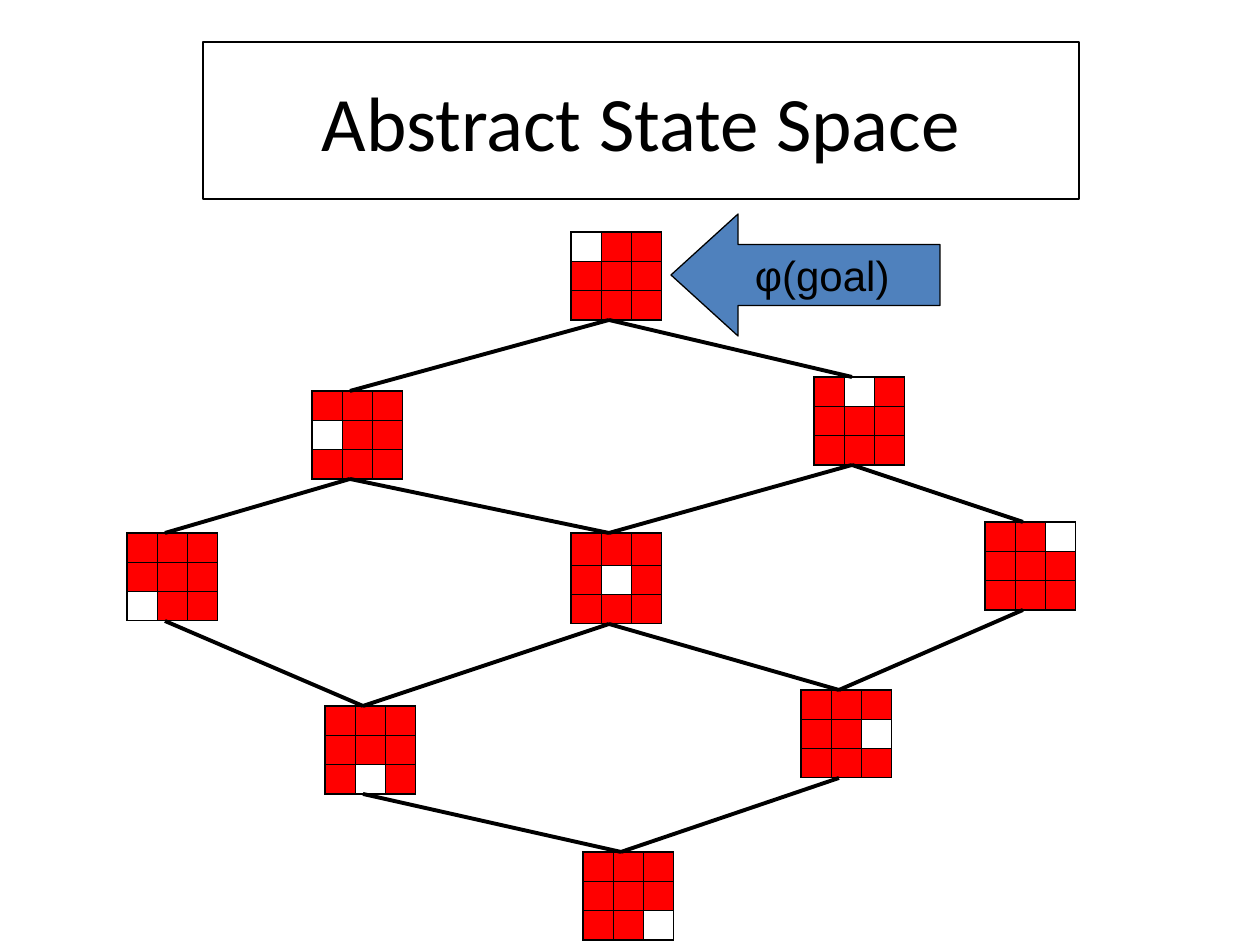
import pptx
import pptx.util
import pptx.dml.color
import pptx.enum.shapes
import pptx.enum.text
import pptx.oxml.ns
from lxml import etree

SCALE = 914400 // 126  # EMU per px
BLACK, WHITE, RED, BLUE = "000000", "FFFFFF", "FF0000", "4F81BD"
SIDE = 88   # board height
MID = 38    # where lines meet a board, from its left edge

# Each board, keyed by the row and column of its blank: left, top, extra height
BOARDS = {
    (0, 0): (571, 232, 0),
    (0, 1): (814, 377, 0),
    (0, 2): (985, 522, 0),
    (1, 0): (312, 391, 0),
    (1, 1): (571, 533, 3),
    (1, 2): (801, 690, 0),
    (2, 0): (127, 533, 0),
    (2, 1): (325, 706, 0),
    (2, 2): (583, 852, 0),
}


def px(*sizes):
    return [pptx.util.Emu(size * SCALE) for size in sizes]


def color(code):
    return pptx.dml.color.RGBColor.from_string(code)


def put(item, values):
    for name, value in values.items():
        setattr(item, name, value)


def child(node, tag, **attrs):
    return etree.SubElement(node, pptx.oxml.ns.qn(tag), attrs)


class Deck:
    thin, thick = 0.75, 2.25

    def __init__(self, slide):
        self.slide = slide

    def fill(self, item, code):
        item.fill.solid()
        item.fill.fore_color.rgb = color(code)

    def line(self, item, width):
        item.line.color.rgb = color(BLACK)
        item.line.width = pptx.util.Pt(width)

    def text(self, shape, words, font, size, wrap):
        frame = shape.text_frame
        put(frame, {"word_wrap": wrap,
                    "vertical_anchor": pptx.enum.text.MSO_ANCHOR.MIDDLE})
        para = frame.paragraphs[0]
        para.alignment = pptx.enum.text.PP_ALIGN.CENTER
        run = para.add_run()
        run.text = words
        put(run.font, {"name": font, "size": pptx.util.Pt(size)})
        run.font.color.rgb = color(BLACK)

    def title(self, box, words):
        shape = self.slide.shapes.add_textbox(*px(*box))
        self.line(shape, self.thin)
        self.text(shape, words, "Calibri", 44, True)

    def arrow(self, box, words):
        kind = pptx.enum.shapes.MSO_SHAPE.LEFT_ARROW
        shape = self.slide.shapes.add_shape(kind, *px(*box))
        shape.shadow.inherit = False
        shape.adjustments[1] = 0.55
        self.fill(shape, BLUE)
        self.line(shape, self.thin)
        self.text(shape, words, "Arial", 24, False)

    def edge(self, start, end):
        kind = pptx.enum.shapes.MSO_CONNECTOR.STRAIGHT
        link = self.slide.shapes.add_connector(kind, *px(*start, *end))
        self.line(link, self.thick)
        child(link._element.spPr, "a:effectLst")

    def border(self, cell):
        props = cell._tc.get_or_add_tcPr()
        for spot, side in enumerate(("a:lnL", "a:lnR", "a:lnT", "a:lnB")):
            rule = child(props, side, w=str(pptx.util.Pt(self.thin)))
            child(child(rule, "a:solidFill"), "a:srgbClr", val=BLACK)
            props.insert(spot, rule)

    def board(self, blank, left, top, extra):
        frame = self.slide.shapes.add_table(
            3, 3, *px(left, top, 87, SIDE + extra))
        table = frame.table
        put(table, {"first_row": False, "horz_banding": False})
        for col in table.columns:
            col.width = px(29)[0]
        for row in table.rows:
            row.height = px(SIDE)[0] // 3
        table.rows[0].height += px(extra)[0]
        for r in range(3):
            for c in range(3):
                cell = table.cell(r, c)
                put(cell, {"margin_top": 0, "margin_bottom": 0})
                self.fill(cell, WHITE if (r, c) == blank else RED)
                self.border(cell)
                # Small type keeps the empty rows low
                child(cell.text_frame.paragraphs[0]._p, "a:endParaRPr", sz="800")


def main():
    show = pptx.Presentation()
    put(show, {"slide_width": pptx.util.Inches(10),
               "slide_height": pptx.util.Inches(7.5)})
    deck = Deck(show.slides.add_slide(show.slide_layouts[6]))

    # Title
    deck.title((203, 42, 876, 157), "Abstract State Space")

    # Boards
    for blank, place in BOARDS.items():
        deck.board(blank, *place)

    # Moves: the blank goes one step down or right
    for (r, c), (left, top, extra) in BOARDS.items():
        for goal in ((r + 1, c), (r, c + 1)):
            if goal in BOARDS:
                x, y, _ = BOARDS[goal]
                deck.edge((left + MID, top + SIDE + extra), (x + MID, y))

    # Goal marker
    deck.arrow((671, 214, 269, 122), "φ(goal)")

    show.save("out.pptx")


if __name__ == "__main__":
    main()
